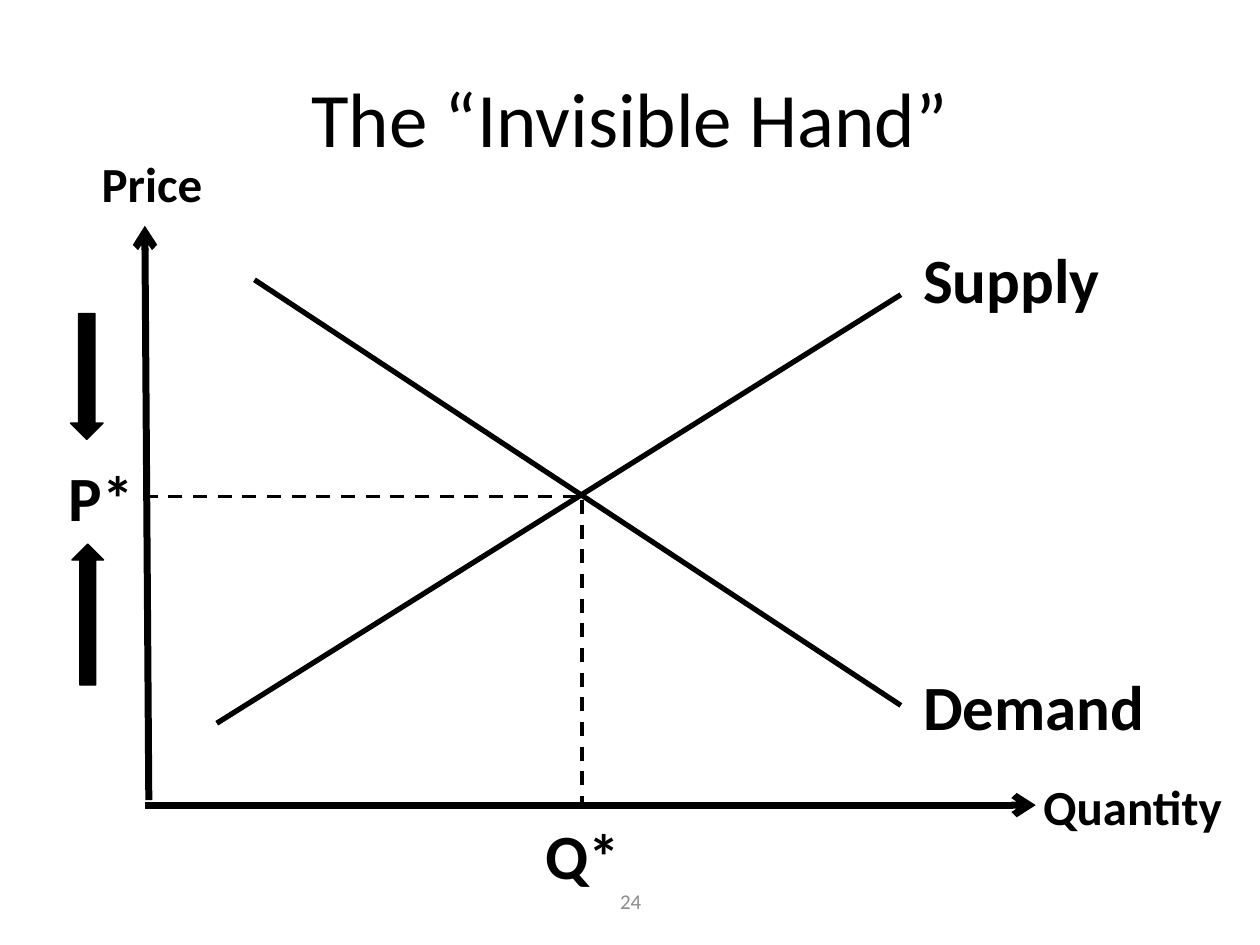
from typing import NamedTuple, Optional

from lxml import etree
from pptx import Presentation
from pptx.dml.color import RGBColor
from pptx.enum.dml import MSO_LINE
from pptx.enum.shapes import MSO_CONNECTOR, MSO_SHAPE
from pptx.enum.text import MSO_ANCHOR, MSO_AUTO_SIZE, PP_ALIGN
from pptx.oxml.ns import qn
from pptx.util import Cm, Pt

STRAIGHT = MSO_CONNECTOR.STRAIGHT
DASH = MSO_LINE.DASH
DOWN, UP = MSO_SHAPE.DOWN_ARROW, MSO_SHAPE.UP_ARROW
TOP, MIDDLE = MSO_ANCHOR.TOP, MSO_ANCHOR.MIDDLE
LEFT, CENTER = PP_ALIGN.LEFT, PP_ALIGN.CENTER
GROW, FIXED = MSO_AUTO_SIZE.SHAPE_TO_FIT_TEXT, MSO_AUTO_SIZE.NONE

FONT = "Calibri"
COLORS = {"ink": "000000", "gray": "8C8C8C", "paper": "FFFFFF"}


class Label(NamedTuple):
    text: str
    box: tuple[float, float, float, float]
    size: int
    color: str = "ink"
    bold: bool = True
    center: bool = False


class Line(NamedTuple):
    start: tuple[float, float]
    end: tuple[float, float]
    width: float
    dash: Optional[MSO_LINE] = None
    arrow: bool = False


class Arrow(NamedTuple):
    kind: MSO_SHAPE
    box: tuple[float, float, float, float]


TITLE = Label("The “Invisible Hand”", (1.27, 0.76, 22.86, 3.18), 44,
              bold=False, center=True)
NUMBER = Label("24", (8.69, 17.65, 8.05, 1.02), 12, "gray", False, True)

AXES = [
    Line((3, 16.13), (2.92, 4.55), 4, arrow=True),
    Line((2.92, 16.23), (20.88, 16.23), 4, arrow=True),
]
CURVES = [
    Line((4.37, 14.58), (18.16, 5.94), 3),
    Line((5.13, 5.64), (18.16, 14.22), 3),
]
GUIDES = [
    Line((11.63, 10.01), (2.92, 10.01), 2, DASH),
    Line((11.73, 10.08), (11.73, 16.26), 2, DASH),
]
LABELS = [
    Label("Supply", (18.36, 4.72, 4.11, 1.8), 36),
    Label("Demand", (18.36, 13.34, 5.03, 1.8), 36),
    Label("P*", (1.14, 9.12, 1.83, 1.8), 36),
    Label("Q*", (10.74, 16.33, 2.03, 1.8), 36),
    Label("Price", (1.8, 2.97, 2.57, 1.45), 28),
    Label("Quantity", (20.78, 15.52, 4.17, 1.45), 28),
]
ARROWS = [
    Arrow(DOWN, (1.42, 6.32, 0.66, 2.54)),
    Arrow(UP, (1.45, 10.97, 0.64, 2.84)),
]


def rgb(name: str) -> RGBColor:
    return RGBColor.from_string(COLORS[name])


def draw_label(slide, label: Label) -> None:
    box = slide.shapes.add_textbox(*map(Cm, label.box))
    frame = box.text_frame
    frame.word_wrap = label.center
    frame.auto_size = FIXED if label.center else GROW
    frame.vertical_anchor = MIDDLE if label.center else TOP
    para = frame.paragraphs[0]
    para.alignment = CENTER if label.center else LEFT
    run = para.add_run()
    run.text = label.text
    run.font.name = FONT
    run.font.size = Pt(label.size)
    run.font.bold = label.bold
    run.font.color.rgb = rgb(label.color)


def draw_line(slide, item: Line) -> None:
    line = slide.shapes.add_connector(
        STRAIGHT, *map(Cm, item.start + item.end))
    line.line.color.rgb = rgb("ink")
    line.line.width = Pt(item.width)
    if item.dash is not None:
        line.line.dash_style = item.dash
    props = line.element.spPr
    if item.arrow:
        etree.SubElement(props.find(qn("a:ln")), qn("a:tailEnd"), type="arrow")
    etree.SubElement(props, qn("a:effectLst"))


def draw_arrow(slide, arrow: Arrow) -> None:
    shape = slide.shapes.add_shape(arrow.kind, *map(Cm, arrow.box))
    shape.shadow.inherit = False
    shape.fill.solid()
    shape.fill.fore_color.rgb = rgb("ink")
    shape.line.color.rgb = rgb("ink")
    shape.line.width = Pt(0.75)


def main() -> None:
    deck = Presentation()
    deck.slide_width, deck.slide_height = Cm(25.4), Cm(19.05)
    slide = deck.slides.add_slide(deck.slide_layouts[6])
    slide.background.fill.solid()
    slide.background.fill.fore_color.rgb = rgb("paper")

    # Title and page number
    for label in (TITLE, NUMBER):
        draw_label(slide, label)

    # Axes, curves and the guides to the balance point
    for line in AXES + CURVES + GUIDES:
        draw_line(slide, line)

    # Names of axes, curves and balance values
    for label in LABELS:
        draw_label(slide, label)

    # Price pressure from above and below
    for arrow in ARROWS:
        draw_arrow(slide, arrow)

    deck.save("out.pptx")


if __name__ == "__main__":
    main()
